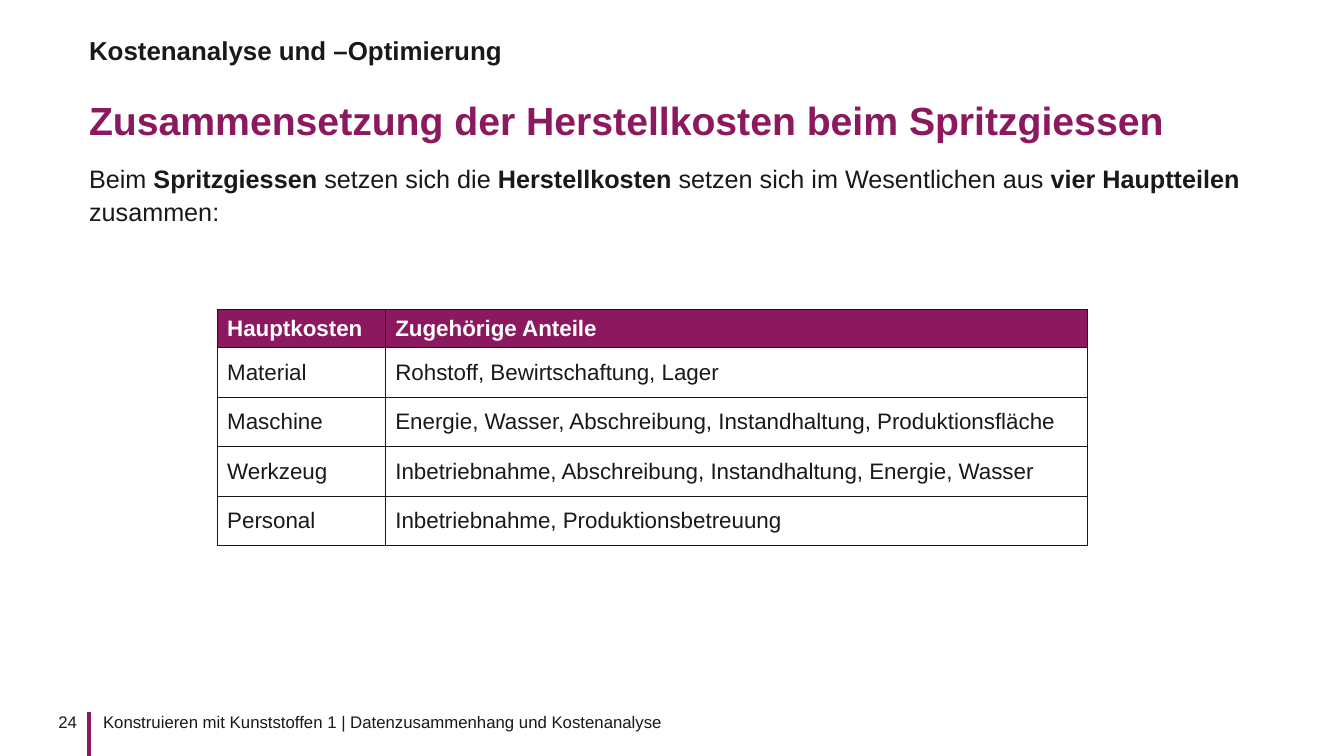
from dataclasses import dataclass

from lxml.etree import SubElement
from pptx import Presentation
from pptx.dml.color import RGBColor
from pptx.enum.shapes import MSO_CONNECTOR
from pptx.enum.text import MSO_ANCHOR, MSO_AUTO_SIZE, PP_ALIGN
from pptx.oxml.ns import qn
from pptx.util import Pt

CHAPTER = "Kostenanalyse und –Optimierung"
TITLE = "Zusammensetzung der Herstellkosten beim Spritzgiessen"
# Every second part is emphasised.
INTRO = (
    "Beim ", "Spritzgiessen", " setzen sich die ", "Herstellkosten",
    " setzen sich im Wesentlichen aus ", "vier Hauptteilen", " zusammen:",
)
COSTS = (
    ("Hauptkosten", "Zugehörige Anteile"),
    ("Material", "Rohstoff, Bewirtschaftung, Lager"),
    ("Maschine", "Energie, Wasser, Abschreibung, Instandhaltung, Produktionsfläche"),
    ("Werkzeug", "Inbetriebnahme, Abschreibung, Instandhaltung, Energie, Wasser"),
    ("Personal", "Inbetriebnahme, Produktionsbetreuung"),
)
FOOTER = "Konstruieren mit Kunststoffen 1 | Datenzusammenhang und Kostenanalyse"
PAGE_NUMBER = "24"

EMU_PER_PX = 9080
SLIDE_WIDTH, SLIDE_HEIGHT = 1343, 755
LEFT, CONTENT_WIDTH = 89, 1217
FOOTER_TOP, FOOTER_GAP = 711, 12
TABLE_LEFT, TABLE_TOP = 217, 309
COLUMN_WIDTHS = (168, 702)
ROW_HEIGHTS = (38, 50, 49, 50, 49)


@dataclass(frozen=True)
class Theme:
    font: str = "Arial"
    accent: RGBColor = RGBColor(0x8C, 0x19, 0x5F)
    ink: RGBColor = RGBColor(0x19, 0x19, 0x19)
    paper: RGBColor = RGBColor(0xFF, 0xFF, 0xFF)
    title: float = 28
    chapter: float = 18.5
    body: float = 18
    table: float = 16
    footer: float = 12


THEME = Theme()


def px(length):
    return length * EMU_PER_PX


def style(paragraph, size, color=THEME.ink, bold=False):
    font = paragraph.font
    font.name, font.size, font.bold = THEME.font, Pt(size), bold
    font.color.rgb = color


def place(shape, left, top, width, height):
    shape.left, shape.top = px(left), px(top)
    shape.width, shape.height = px(width), px(height)


def prepare(frame, anchor, inset_left=0, inset_right=0):
    """Set insets, wrapping and anchor; return the first paragraph."""
    frame.margin_left, frame.margin_right = px(inset_left), px(inset_right)
    frame.margin_top = frame.margin_bottom = 0
    frame.word_wrap = True
    frame.auto_size = MSO_AUTO_SIZE.NONE
    frame.vertical_anchor = anchor
    return frame.paragraphs[0]


def fill_placeholder(shape, parts, top, height, anchor, spacing, size, **look):
    place(shape, LEFT, top, CONTENT_WIDTH, height)
    paragraph = prepare(shape.text_frame, anchor)
    properties = paragraph._p.get_or_add_pPr()
    properties.set("marL", "0")
    properties.set("indent", "0")
    SubElement(properties, qn("a:buNone"))
    paragraph.alignment = PP_ALIGN.LEFT
    paragraph.line_spacing = spacing
    paragraph.space_before = Pt(0)
    style(paragraph, size, **look)
    for index, part in enumerate(parts):
        run = paragraph.add_run()
        run.text = part
        if index % 2:
            run.font.bold = True


def add_footer_text(slide, text, left, width, alignment, **insets):
    box = slide.shapes.add_textbox(0, 0, 0, 0)
    place(box, left, FOOTER_TOP, width, SLIDE_HEIGHT - FOOTER_TOP)
    paragraph = prepare(box.text_frame, MSO_ANCHOR.TOP, **insets)
    paragraph.text = text
    paragraph.alignment = alignment
    style(paragraph, THEME.footer)


def add_footer(slide):
    bar = slide.shapes.add_connector(
        MSO_CONNECTOR.STRAIGHT, px(LEFT), px(FOOTER_TOP), px(LEFT), px(SLIDE_HEIGHT))
    bar.line.color.rgb, bar.line.width = THEME.accent, Pt(3)
    SubElement(bar._element.spPr, qn("a:effectLst"))
    add_footer_text(slide, FOOTER, LEFT + 2, 591, PP_ALIGN.LEFT, inset_left=FOOTER_GAP)
    add_footer_text(slide, PAGE_NUMBER, LEFT - 60, 60, PP_ALIGN.RIGHT,
                    inset_right=FOOTER_GAP)


def add_borders(cell):
    properties = cell._tc.get_or_add_tcPr()
    for side in ("lnL", "lnR", "lnT", "lnB"):
        line = SubElement(properties, qn(f"a:{side}"), w=str(Pt(1)))
        fill = SubElement(line, qn("a:solidFill"))
        SubElement(fill, qn("a:srgbClr"), val=str(THEME.ink))


def add_cost_table(slide):
    table = slide.shapes.add_table(
        len(COSTS), len(COLUMN_WIDTHS), px(TABLE_LEFT), px(TABLE_TOP),
        px(sum(COLUMN_WIDTHS)), px(sum(ROW_HEIGHTS))).table
    table.horz_banding = False
    for column, width in zip(table.columns, COLUMN_WIDTHS):
        column.width = px(width)
    for index, (row, height, texts) in enumerate(zip(table.rows, ROW_HEIGHTS, COSTS)):
        row.height = px(height)
        header = index == 0
        for cell, text in zip(row.cells, texts):
            add_borders(cell)
            cell.fill.solid()
            cell.fill.fore_color.rgb = THEME.accent if header else THEME.paper
            cell.vertical_anchor = MSO_ANCHOR.MIDDLE
            cell.text = text
            style(cell.text_frame.paragraphs[0], THEME.table,
                  THEME.paper if header else THEME.ink, header)


def main():
    presentation = Presentation()
    presentation.slide_width = px(SLIDE_WIDTH)
    presentation.slide_height = px(SLIDE_HEIGHT)
    two_content = presentation.slide_layouts[3]
    slide = presentation.slides.add_slide(two_content)
    title, intro, chapter = slide.placeholders
    add_footer(slide)
    fill_placeholder(title, [TITLE], 77, 75, MSO_ANCHOR.MIDDLE, 1.2,
                     THEME.title, color=THEME.accent, bold=True)
    fill_placeholder(intro, INTRO, 160, 524, MSO_ANCHOR.TOP, 1.1, THEME.body)
    fill_placeholder(chapter, [CHAPTER], 37, 31, MSO_ANCHOR.MIDDLE, 0.9,
                     THEME.chapter, bold=True)
    add_cost_table(slide)
    presentation.save("out.pptx")


if __name__ == "__main__":
    main()
